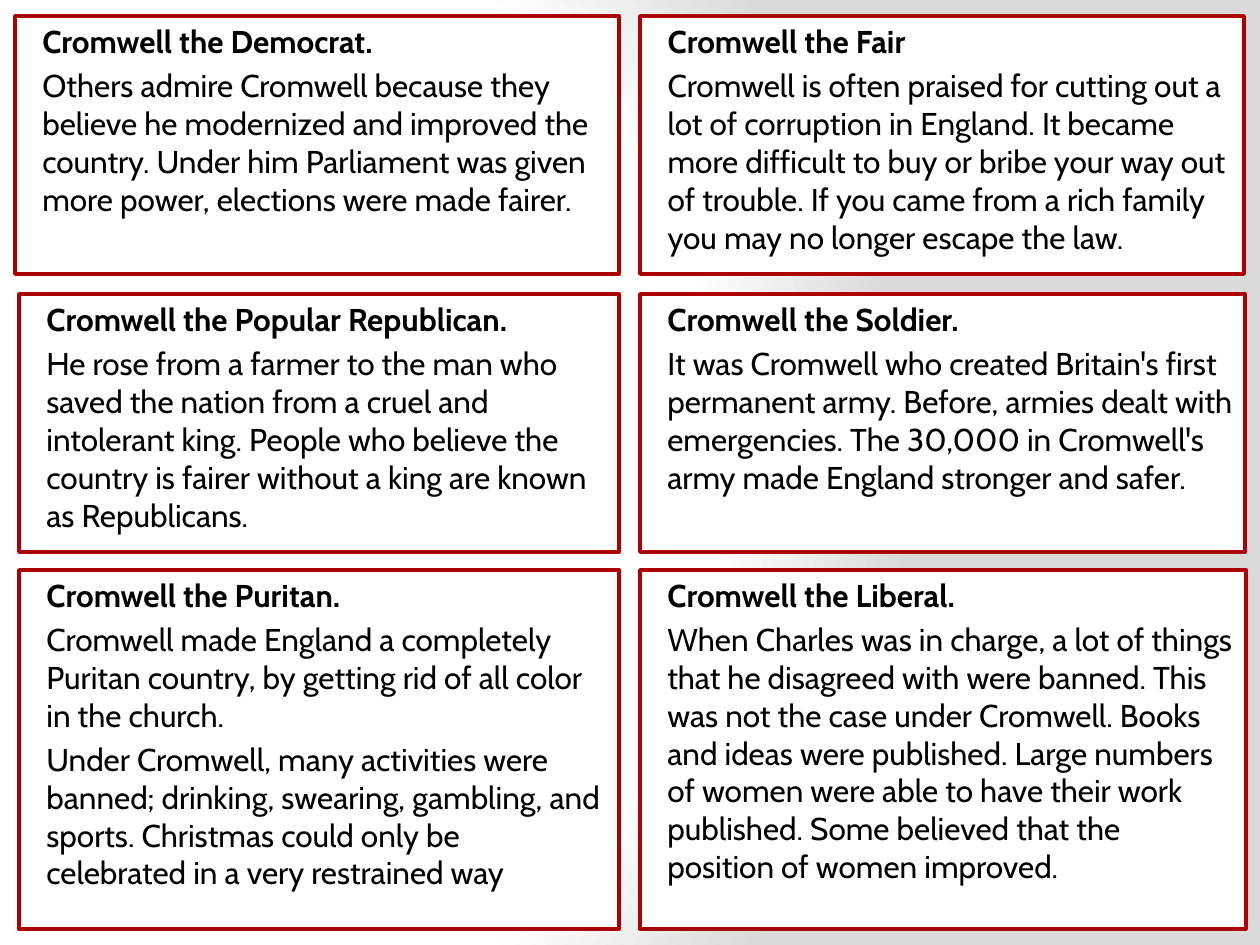
"""Build a slide of six cards with differing views of Cromwell."""
import pptx
import pptx.dml.color
import pptx.enum.shapes
import pptx.enum.text
import pptx.oxml
import pptx.oxml.ns
import pptx.util

PX = 914400 / 126
COLORS = {"card": "FFFFFF", "border": "AD0101", "text": "000000", "shade": "DADADA"}
FONT = "Cabin"
ROWS = [(16, 258), (294, 258), (570, 359)]
CARDS = [
    (0, 640, 604, "Cromwell the Fair", [
        "Cromwell is often praised for cutting out a lot of corruption in England. "
        "It became more difficult to buy or bribe your way out of trouble. "
        "If you came from a rich family you may no longer escape the law."]),
    (1, 19, 600, "Cromwell the Popular Republican.", [
        "He rose from a farmer to the man who saved the nation from a cruel and "
        "intolerant king. People who believe the country is fairer without a king "
        "are known as Republicans."]),
    (0, 15, 604, "Cromwell the Democrat.", [
        "Others admire Cromwell because they believe he modernized and improved the "
        "country. Under him Parliament was given more power, elections were made fairer."]),
    (1, 640, 605, "Cromwell the Soldier.", [
        "It was Cromwell who created Britain's first permanent army. Before, armies "
        "dealt with emergencies. The 30,000 in Cromwell's army made England stronger "
        "and safer."]),
    (2, 640, 606, "Cromwell the Liberal.", [
        "When Charles was in charge, a lot of things that he disagreed with were "
        "banned. This was not the case under Cromwell. Books and ideas were published. "
        "Large numbers of women were able to have their work published. "
        "Some believed that the position of women improved."]),
    (2, 19, 600, "Cromwell the Puritan.", [
        "Cromwell made England a completely Puritan country, by getting rid of all "
        "color in the church.",
        "Under Cromwell, many activities were banned; drinking, swearing, gambling, "
        "and sports. Christmas could only be celebrated in a very restrained way"]),
]


def px(n):
    return pptx.util.Emu(round(n * PX))


def rgb(name):
    return pptx.dml.color.RGBColor.from_string(COLORS[name])


def set_background(s):
    s.background.fill.solid()
    stops = "".join(
        f'<a:gs pos="{pos * 1000}"><a:srgbClr val="{COLORS[name]}"/></a:gs>'
        for pos, name in [(0, "card"), (75, "card"), (100, "shade")])
    grad = pptx.oxml.parse_xml(
        f'<a:gradFill {pptx.oxml.ns.nsdecls("a")} rotWithShape="1"><a:gsLst>{stops}</a:gsLst>'
        '<a:path path="circle"><a:fillToRect l="20000" t="50000" r="100000" b="50000"/>'
        '</a:path></a:gradFill>')
    bg = s._element.cSld.bg.bgPr
    bg.replace(bg[0], grad)


def format_card(sp, title, body):
    sp.fill.solid()
    sp.fill.fore_color.rgb = rgb("card")
    sp.line.color.rgb = rgb("border")
    sp.line.width = pptx.util.Pt(2)
    tf = sp.text_frame
    tf.word_wrap = True
    tf.auto_size = pptx.enum.text.MSO_AUTO_SIZE.NONE
    tf.vertical_anchor = pptx.enum.text.MSO_ANCHOR.TOP
    tf.text = "\n".join([title, *body])
    for i, p in enumerate(tf.paragraphs):
        p.alignment = pptx.enum.text.PP_ALIGN.LEFT
        p.space_before = pptx.util.Pt(3.6)
        p.font.name = FONT
        p.font.size = pptx.util.Pt(18)
        p.font.bold = i == 0
        p.font.color.rgb = rgb("text")
        pPr = p._p.get_or_add_pPr()
        pPr.set("marL", str(px(15)))
        pPr.set("indent", "0")
        pPr.insert_element_before(
            pptx.oxml.parse_xml(f'<a:buNone {pptx.oxml.ns.nsdecls("a")}/>'),
            "a:tabLst", "a:defRPr", "a:extLst")


def main():
    prs = pptx.Presentation()
    prs.slide_width, prs.slide_height = px(1260), px(945)
    s = prs.slides.add_slide(prs.slide_layouts[1])
    set_background(s)
    title_sp = s.shapes.title._element
    title_sp.getparent().remove(title_sp)
    body_sp = s.placeholders[1]
    for i, (row, left, width, title, body) in enumerate(CARDS):
        top, height = ROWS[row]
        box = [px(n) for n in (left, top, width, height)]
        if i == 0:
            sp = body_sp
            sp.left, sp.top, sp.width, sp.height = box
        else:
            sp = s.shapes.add_shape(pptx.enum.shapes.MSO_SHAPE.RECTANGLE, *box)
            sp.shadow.inherit = False
        format_card(sp, title, body)
    prs.save("out.pptx")


if __name__ == "__main__":
    main()
